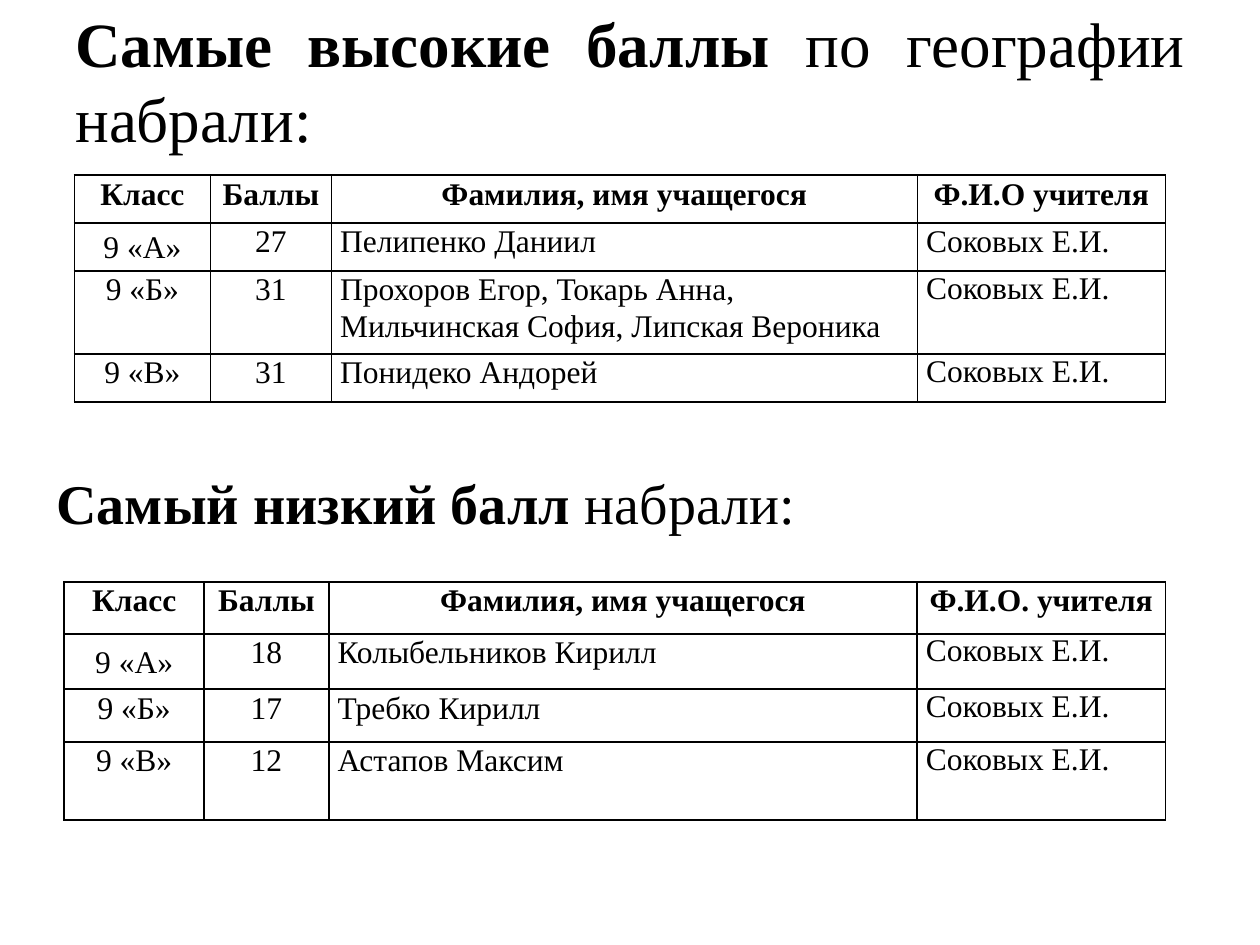
from dataclasses import dataclass

from lxml import etree
from pptx import Presentation
from pptx.dml.color import RGBColor
from pptx.enum.text import MSO_ANCHOR, MSO_AUTO_SIZE, PP_ALIGN
from pptx.oxml.ns import qn
from pptx.util import Inches, Pt

CENTER, JUSTIFY, LEFT = PP_ALIGN.CENTER, PP_ALIGN.JUSTIFY, PP_ALIGN.LEFT
TOP, MIDDLE = MSO_ANCHOR.TOP, MSO_ANCHOR.MIDDLE
GROW = MSO_AUTO_SIZE.SHAPE_TO_FIT_TEXT
COLUMN_ALIGNS = (CENTER, CENTER, JUSTIFY, LEFT)
TEACHER_COLUMN = 3
TEACHER = "Соковых Е.И."


@dataclass(frozen=True)
class Theme:
    font: str = "Times New Roman"
    ink: str = "000000"
    title_size: int = 36
    subtitle_size: int = 32
    table_size: int = 18
    border_width: int = 1
    line_spacing: float = 1.05
    cell_margin: float = 0.07


@dataclass(frozen=True)
class Heading:
    bold_part: str
    plain_part: str
    left: float
    top: float
    width: float
    height: float
    size: int
    wrap: bool
    anchor: MSO_ANCHOR = TOP
    bottom_margin: float = 0.05


@dataclass(frozen=True)
class ScoreTable:
    left: float
    top: float
    column_widths: tuple[float, ...]
    row_heights: tuple[float, ...]
    teacher_header: str
    results: tuple[tuple[str, str, str], ...]
    spaced_teacher_rows: tuple[int, ...] = (0,)


THEME = Theme()

HEADINGS = (
    Heading("Самые высокие баллы ", "по географии набрали:", 0.5, 0.3, 9, 1.25,
            THEME.title_size, True, MIDDLE, 0.63),
    Heading("Самый низкий балл", " набрали:", 0.35, 3.67, 6.12, 0.64,
            THEME.subtitle_size, False),
)

SCORE_TABLES = (
    ScoreTable(
        0.59, 1.39, (1.08, 0.96, 4.65, 1.97), (0.38, 0.38, 0.66, 0.38),
        "Ф.И.О учителя",
        (
            ("9 «А»", "27", "Пелипенко Даниил"),
            ("9 «Б»", "31",
             "Прохоров Егор, Токарь Анна,\nМильчинская София, Липская Вероника"),
            ("9 «В»", "31", "Понидеко Андорей"),
        ),
        (0, 1),
    ),
    ScoreTable(
        0.51, 4.62, (1.11, 0.99, 4.67, 1.97), (0.41, 0.44, 0.42, 0.62),
        "Ф.И.О. учителя",
        (
            ("9 «А»", "18", "Колыбельников Кирилл"),
            ("9 «Б»", "17", "Требко Кирилл"),
            ("9 «В»", "12", "Астапов Максим"),
        ),
    ),
)


def style_run(run, size: int, bold: bool) -> None:
    run.font.name = THEME.font
    run.font.size = Pt(size)
    run.font.bold = bold
    run.font.color.rgb = RGBColor.from_string(THEME.ink)


def draw_heading(slide, heading: Heading) -> None:
    box = slide.shapes.add_textbox(Inches(heading.left), Inches(heading.top),
                                   Inches(heading.width), Inches(heading.height))
    frame = box.text_frame
    frame.word_wrap = heading.wrap
    frame.vertical_anchor = heading.anchor
    frame.margin_bottom = Inches(heading.bottom_margin)
    if not heading.wrap:
        frame.auto_size = GROW
    paragraph = frame.paragraphs[0]
    paragraph.alignment = JUSTIFY
    for wording, bold in ((heading.bold_part, True), (heading.plain_part, False)):
        run = paragraph.add_run()
        run.text = wording
        style_run(run, heading.size, bold)


def add_borders(cell) -> None:
    properties = cell._tc.get_or_add_tcPr()
    for position, side in enumerate(("lnL", "lnR", "lnT", "lnB")):
        border = etree.Element(qn(f"a:{side}"), w=str(Pt(THEME.border_width)))
        fill = etree.SubElement(border, qn("a:solidFill"))
        etree.SubElement(fill, qn("a:srgbClr"), val=THEME.ink)
        properties.insert(position, border)


def fill_cell(cell, wording: str, align: PP_ALIGN, bold: bool, spacing: float,
              anchor: MSO_ANCHOR) -> None:
    cell.text_frame.text = wording
    cell.vertical_anchor = anchor
    cell.margin_left = cell.margin_right = Inches(THEME.cell_margin)
    cell.margin_top = cell.margin_bottom = 0
    cell.fill.background()
    add_borders(cell)
    for paragraph in cell.text_frame.paragraphs:
        paragraph.alignment = align
        paragraph.line_spacing = spacing
        for run in paragraph.runs:
            style_run(run, THEME.table_size, bold)


def draw_score_table(slide, scores: ScoreTable) -> None:
    header = ("Класс", "Баллы", "Фамилия, имя учащегося", scores.teacher_header)
    rows = (header, *((*result, TEACHER) for result in scores.results))
    table = slide.shapes.add_table(
        len(rows), len(header), Inches(scores.left), Inches(scores.top),
        Inches(sum(scores.column_widths)), Inches(sum(scores.row_heights)),
    ).table
    table.first_row = table.horz_banding = False
    for column, width in zip(table.columns, scores.column_widths):
        column.width = Inches(width)
    for row, height in zip(table.rows, scores.row_heights):
        row.height = Inches(height)
    for row_index, row in enumerate(rows):
        is_header = row_index == 0
        for column_index, wording in enumerate(row):
            is_single_spaced = (column_index == TEACHER_COLUMN
                                and row_index not in scores.spaced_teacher_rows)
            fill_cell(
                table.cell(row_index, column_index),
                wording,
                CENTER if is_header else COLUMN_ALIGNS[column_index],
                is_header,
                1.0 if is_single_spaced else THEME.line_spacing,
                MIDDLE if (row_index, column_index) == (1, 0) else TOP,
            )


def main() -> None:
    presentation = Presentation()
    presentation.slide_width = Inches(10)
    presentation.slide_height = Inches(7.5)
    slide = presentation.slides.add_slide(presentation.slide_layouts[6])
    for heading, scores in zip(HEADINGS, SCORE_TABLES):
        draw_heading(slide, heading)
        draw_score_table(slide, scores)
    presentation.save("out.pptx")


if __name__ == "__main__":
    main()
